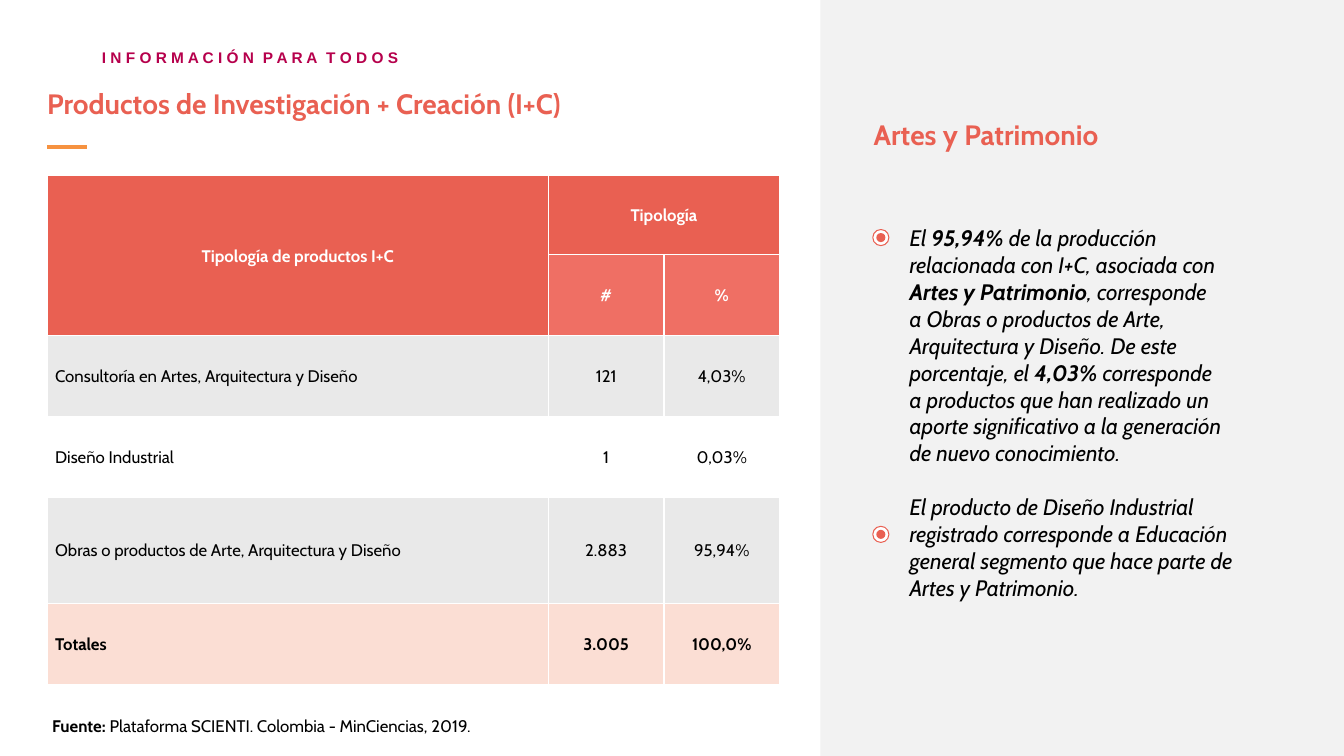
from lxml.etree import SubElement
from pptx import Presentation
from pptx.dml.color import RGBColor
from pptx.enum.shapes import MSO_CONNECTOR, MSO_SHAPE
from pptx.enum.text import MSO_ANCHOR, PP_ALIGN
from pptx.oxml.ns import qn
from pptx.util import Pt

CORAL = RGBColor(0xE9, 0x60, 0x52)
LIGHT_CORAL = RGBColor(0xEF, 0x6F, 0x64)
PEACH = RGBColor(0xFB, 0xDE, 0xD4)
ORANGE = RGBColor(0xF6, 0x92, 0x40)
MAGENTA = RGBColor(0xB6, 0x00, 0x4C)
BAND_GRAY = RGBColor(0xE9, 0xE9, 0xE9)
PANEL_GRAY = RGBColor(0xF2, 0xF2, 0xF2)
WHITE = RGBColor(0xFF, 0xFF, 0xFF)
BLACK = RGBColor(0x00, 0x00, 0x00)


def set_frame(shape, margins):
    frame = shape.text_frame
    frame.word_wrap = True
    frame.vertical_anchor = MSO_ANCHOR.TOP
    frame.margin_left, frame.margin_top, frame.margin_right, frame.margin_bottom = map(Pt, margins)
    return frame


def add_run(paragraph, text, size, color, bold=False, italic=False, name="Cabin"):
    run = paragraph.add_run()
    run.text = text
    run.font.name = name
    run.font.size = Pt(size)
    run.font.bold = bold
    run.font.italic = italic
    run.font.color.rgb = color
    return run


presentation = Presentation()
presentation.slide_width = Pt(960)
presentation.slide_height = Pt(540)
slide = presentation.slides.add_slide(presentation.slide_layouts[5])
shapes = slide.shapes

# Side panel
panel = shapes.add_shape(MSO_SHAPE.RECTANGLE, Pt(586), Pt(0), Pt(374), Pt(540))
panel.shadow.inherit = False
panel.fill.solid()
panel.fill.fore_color.rgb = PANEL_GRAY
panel.line.fill.background()

# Header line: the space between words is widened by character spacing
header = shapes.add_textbox(Pt(71.3), Pt(28.8), Pt(295), Pt(18))
paragraph = set_frame(header, (1.5, 1.4, 0, 0)).paragraphs[0]
paragraph.line_spacing = 1.3
for index, word in enumerate(("I N F O R M A C I Ó N", "P A R A", "T O D O S")):
    if index:
        gap = add_run(paragraph, " ", 11, MAGENTA, bold=True, name="Arial")
        gap.font._element.set("spc", "300")
    add_run(paragraph, word, 11, MAGENTA, bold=True, name="Arial")

# Title and panel heading
title = shapes.title
title.left, title.top, title.width, title.height = Pt(32.4), Pt(61.9), Pt(561), Pt(24.5)
heading = shapes.add_textbox(Pt(622.8), Pt(84.2), Pt(275), Pt(24.5))
for shape, text in ((title, "Productos de Investigación + Creación (I+C)"),
                    (heading, "Artes y Patrimonio")):
    paragraph = set_frame(shape, (1.2, 0, 0, 0)).paragraphs[0]
    paragraph.alignment = PP_ALIGN.LEFT
    add_run(paragraph, text, 20, CORAL, bold=True)

# Short rule below the title
rule = shapes.add_connector(MSO_CONNECTOR.STRAIGHT, Pt(33.8), Pt(105), Pt(62.3), Pt(105))
rule.line.color.rgb = ORANGE
rule.line.width = Pt(2.25)
SubElement(rule._element.spPr, qn("a:effectLst"))

# Panel text: each paragraph is a list of (text, bold)
findings = [
    [("El ", False), ("95,94% ", True),
     ("de la producción relacionada con I+C, asociada con ", False),
     ("Artes y Patrimonio", True), (", corresponde", False)],
    [("a Obras o productos de Arte, Arquitectura y Diseño. De este porcentaje, el", False),
     (" 4,03% ", True), ("corresponde", False)],
    [("a productos que han realizado un aporte significativo a la generación "
      "de nuevo conocimiento.", False)],
    [("El producto de Diseño Industrial registrado corresponde a Educación general "
      "segmento que hace parte de Artes y Patrimonio.", False)],
]
findings_box = shapes.add_textbox(Pt(640.1), Pt(155.5), Pt(258.5), Pt(300))
frame = set_frame(findings_box, (9.6, 4.8, 9.6, 4.8))
for index, parts in enumerate(findings):
    paragraph = frame.add_paragraph() if index else frame.paragraphs[0]
    for text, bold in parts:
        add_run(paragraph, text, 16, BLACK, bold, italic=True)
paragraph.space_before = Pt(19.2)

# Ring markers beside the panel text
for center_y in (169.7, 381.7):
    marker = shapes.add_group_shape()
    for diameter, color in ((11.5, WHITE), (6.5, CORAL)):
        circle = marker.shapes.add_shape(
            MSO_SHAPE.OVAL, Pt(629.2 - diameter / 2), Pt(center_y - diameter / 2),
            Pt(diameter), Pt(diameter))
        circle.shadow.inherit = False
        circle.fill.solid()
        circle.fill.fore_color.rgb = color
        if color == WHITE:
            circle.line.color.rgb = CORAL
            circle.line.width = Pt(0.75)
        else:
            circle.line.fill.background()

# Product table: cell texts, then fills for each row
rows = [
    ("Tipología de productos I+C", "Tipología", ""),
    ("", "#", "%"),
    ("Consultoría en Artes, Arquitectura y Diseño", "121", "4,03%"),
    ("Diseño Industrial", "1", "0,03%"),
    ("Obras o productos de Arte, Arquitectura y Diseño", "2.883", "95,94%"),
    ("Totales", "3.005", "100,0%"),
]
row_fills = [CORAL, LIGHT_CORAL, BAND_GRAY, None, BAND_GRAY, PEACH]
row_heights = [56.6, 57.8, 57.8, 57.8, 75.6, 57.8]
column_widths = [357.8, 82.6, 82.6]
table = shapes.add_table(6, 3, Pt(33.9), Pt(125.4), Pt(523), Pt(363.4)).table
table.first_row = False
table.horz_banding = False
for column, width in zip(table.columns, column_widths):
    column.width = Pt(width)
for row_index, texts in enumerate(rows):
    table.rows[row_index].height = Pt(row_heights[row_index])
    is_header = row_index < 2
    for column_index, text in enumerate(texts):
        cell = table.cell(row_index, column_index)
        cell.vertical_anchor = MSO_ANCHOR.MIDDLE
        cell.margin_left = cell.margin_right = Pt(5.5)
        cell.margin_top, cell.margin_bottom = Pt(0.7), Pt(0)
        for side in ("a:lnL", "a:lnR", "a:lnT", "a:lnB"):
            border = SubElement(cell._tc.get_or_add_tcPr(), qn(side), w=str(Pt(1)))
            border_fill = SubElement(border, qn("a:solidFill"))
            SubElement(border_fill, qn("a:srgbClr"), val=str(WHITE))
        if row_fills[row_index] is None:
            cell.fill.background()
        else:
            cell.fill.solid()
            cell.fill.fore_color.rgb = row_fills[row_index]
        if text:
            paragraph = cell.text_frame.paragraphs[0]
            centered = is_header or column_index > 0
            paragraph.alignment = PP_ALIGN.CENTER if centered else PP_ALIGN.LEFT
            add_run(paragraph, text, 12, WHITE if is_header else BLACK,
                    bold=is_header or row_index == 5)
table.cell(0, 0).merge(table.cell(1, 0))
table.cell(0, 1).merge(table.cell(0, 2))

# Data source
source_box = shapes.add_textbox(Pt(27.6), Pt(506.2), Pt(474), Pt(24.5))
paragraph = set_frame(source_box, (9.6, 4.8, 9.6, 4.8)).paragraphs[0]
add_run(paragraph, "Fuente: ", 12, BLACK, bold=True)
add_run(paragraph, "Plataforma SCIENTI. Colombia - MinCiencias, 2019.", 12, BLACK)

presentation.save("out.pptx")
